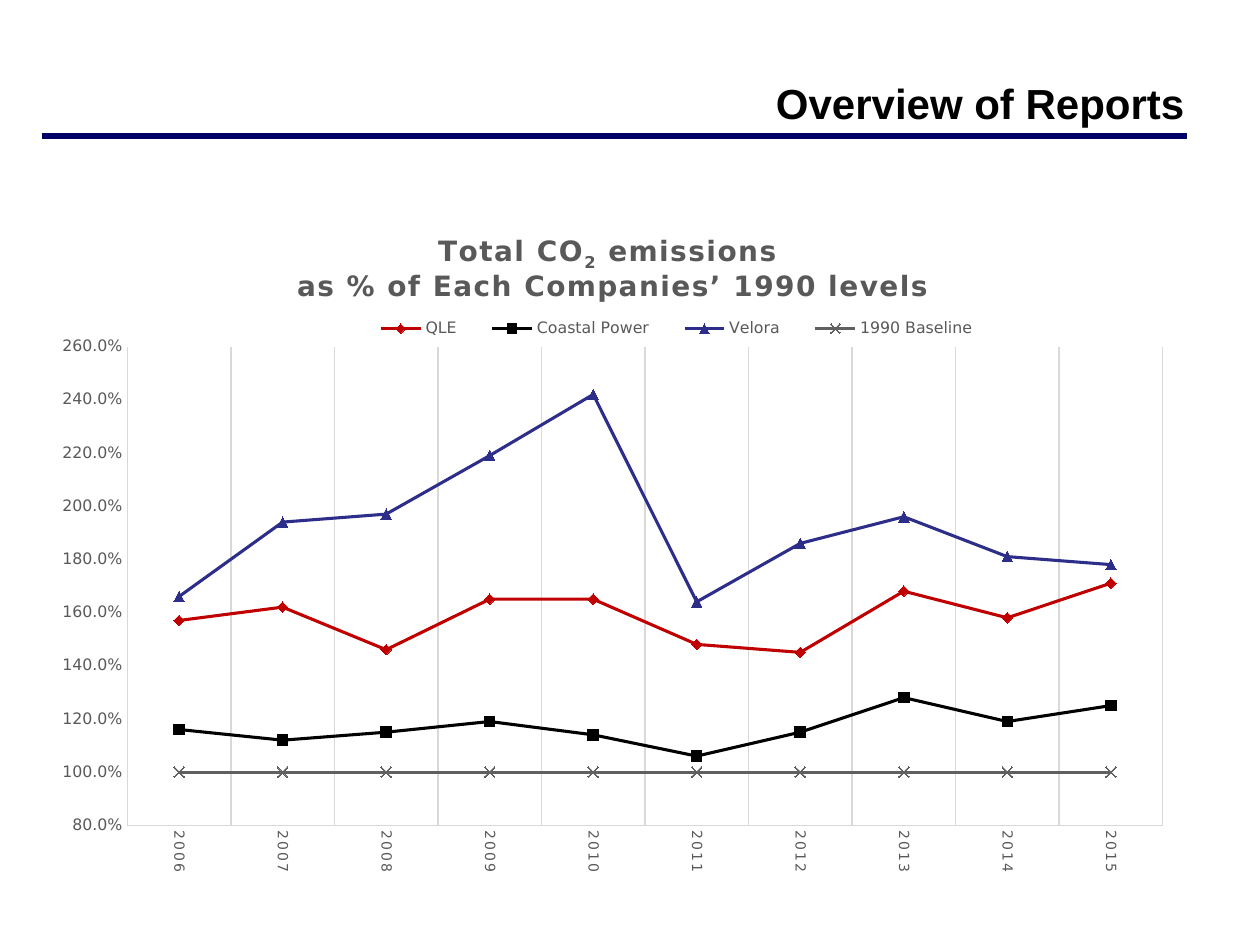
import pptx
import pptx.chart.data
import pptx.dml.color
import pptx.enum.chart
import pptx.enum.shapes
import pptx.enum.text
import pptx.oxml
import pptx.oxml.ns
import pptx.util

WIDTH, HEIGHT = 10, 7.5
COLORS = {
    "rule": "000066", "ink": "000000", "label": "595959", "grid": "D9D9D9",
    "red": "C00000", "blue": "2D2D8A", "gray": "606060",
}
CHART_FONT = "DejaVu Sans"
YEARS = [str(year) for year in range(2006, 2016)]
MARKERS = pptx.enum.chart.XL_MARKER_STYLE
EMISSIONS = [
    ("QLE", "red", MARKERS.DIAMOND,
     [1.57, 1.62, 1.46, 1.65, 1.65, 1.48, 1.45, 1.68, 1.58, 1.71]),
    ("Coastal Power", "ink", MARKERS.SQUARE,
     [1.16, 1.12, 1.15, 1.19, 1.14, 1.06, 1.15, 1.28, 1.19, 1.25]),
    ("Velora", "blue", MARKERS.TRIANGLE,
     [1.66, 1.94, 1.97, 2.19, 2.42, 1.64, 1.86, 1.96, 1.81, 1.78]),
    ("1990 Baseline", "gray", MARKERS.X, [1] * len(YEARS)),
]


def rgb(name):
    return pptx.dml.color.RGBColor.from_string(COLORS[name])


def share(*parts):
    """Turn alternating shares of slide width and height into lengths."""
    return [pptx.util.Inches(part * (HEIGHT if i % 2 else WIDTH))
            for i, part in enumerate(parts)]


def style_font(font, name, size, color, bold=False):
    font.name, font.size, font.bold = name, pptx.util.Pt(size), bold
    font.color.rgb = rgb(color)


def style_line(line, color, width):
    line.color.rgb = rgb(color)
    line.width = pptx.util.Pt(width)


def add_heading(slide, text):
    heading = slide.shapes.title
    heading.left, heading.top, heading.width, heading.height = share(
        0.267, 0.073, 0.683, 0.071)
    frame = heading.text_frame
    frame.vertical_anchor = pptx.enum.text.MSO_ANCHOR.MIDDLE
    paragraph = frame.paragraphs[0]
    paragraph.alignment = pptx.enum.text.PP_ALIGN.RIGHT
    run = paragraph.add_run()
    run.text = text
    style_font(run.font, "Arial", 24, "ink", True)


def add_rule(slide):
    rule = slide.shapes.add_connector(
        pptx.enum.shapes.MSO_CONNECTOR.STRAIGHT, *share(0.033, 0.144, 0.942, 0.144))
    style_line(rule.line, "rule", 3)
    properties = rule._element.spPr
    properties.append(properties.makeelement(pptx.oxml.ns.qn("a:effectLst"), {}))


def place(part, x, y, w=None, h=None, inner=False):
    """Fix a chart part at shares of the chart's size."""
    fields = [("layoutTarget", "inner")] if inner else []
    fields += [("xMode", "edge"), ("yMode", "edge")]
    fields += [(key, value) for key, value in zip("xywh", (x, y, w, h)) if value is not None]
    inside = "".join(f'<c:{key} val="{value}"/>' for key, value in fields)
    layout = pptx.oxml.parse_xml(
        f'<c:layout {pptx.oxml.ns.nsdecls("c")}><c:manualLayout>{inside}'
        '</c:manualLayout></c:layout>')
    for old in part.findall(pptx.oxml.ns.qn("c:layout")):
        part.remove(old)
    before = {"title": "c:tx", "legend": "c:legendPos"}
    local = part.tag.split("}")[1]
    if local in before:
        part.find(pptx.oxml.ns.qn(before[local])).addnext(layout)
    else:
        part.insert(0, layout)


def add_chart_title(chart):
    title = chart.chart_title
    frame = title.text_frame
    lines = [[("Total CO", 0), ("2", -25000), (" emissions ", 0)],
             [("as % of Each Companies’ 1990 levels", 0)]]
    for i, line in enumerate(lines):
        paragraph = frame.add_paragraph() if i else frame.paragraphs[0]
        for text, baseline in line:
            run = paragraph.add_run()
            run.text = text
            style_font(run.font, CHART_FONT, 16, "label", True)
            run.font._element.set("spc", "100")
            run.font._element.set("baseline", str(baseline))
    title.include_in_layout = False
    place(title._element, 0.22, 0.036)


def style_axes(chart):
    ticks = pptx.enum.chart.XL_TICK_MARK
    years, levels = chart.category_axis, chart.value_axis
    for axis, size in ((years, 8), (levels, 9)):
        axis.major_tick_mark = axis.minor_tick_mark = ticks.NONE
        style_line(axis.format.line, "grid", 0.75)
        style_font(axis.tick_labels.font, CHART_FONT, size, "label")
    years.has_major_gridlines = True
    style_line(years.major_gridlines.format.line, "grid", 0.75)
    year_text = years._element.find(pptx.oxml.ns.qn("c:txPr"))
    year_text.bodyPr.set("rot", "5400000")
    year_text.bodyPr.set("vert", "horz")
    years.tick_labels.font._element.set("spc", "100")
    levels.has_major_gridlines = False
    levels.minimum_scale, levels.maximum_scale, levels.major_unit = 0.8, 2.6, 0.2
    levels.tick_labels.number_format = "0.0%"
    levels.tick_labels.number_format_is_linked = False


def style_series(series, color, marker):
    series.smooth = False
    style_line(series.format.line, color, 1.75)
    series.marker.style, series.marker.size = marker, 6
    series.marker.format.line.color.rgb = rgb(color)
    series.marker.format.fill.solid()
    series.marker.format.fill.fore_color.rgb = rgb(color)


def add_emissions_chart(slide):
    data = pptx.chart.data.CategoryChartData(number_format="0.0%")
    data.categories = YEARS
    for company, _, _, levels in EMISSIONS:
        data.add_series(company, levels)
    chart = slide.shapes.add_chart(
        pptx.enum.chart.XL_CHART_TYPE.LINE_MARKERS,
        *share(0.033, 0.217, 0.908, 0.727), data).chart
    style_font(chart.font, CHART_FONT, 10, "ink")
    add_chart_title(chart)
    style_axes(chart)
    plot = chart.plots[0]
    plot.vary_by_categories = False
    for series, (_, color, marker, _) in zip(plot.series, EMISSIONS):
        style_series(series, color, marker)
    chart.has_legend = True
    chart.legend.position = pptx.enum.chart.XL_LEGEND_POSITION.TOP
    chart.legend.include_in_layout = False
    style_font(chart.legend.font, CHART_FONT, 9, "label")
    place(chart.legend._element, 0.27, 0.16, 0.57, 0.04)
    place(chart._chartSpace.chart.plotArea, 0.075, 0.206, 0.905, 0.697, inner=True)


def main():
    deck = pptx.Presentation()
    deck.slide_width, deck.slide_height = share(1, 1)
    slide = deck.slides.add_slide(deck.slide_layouts.get_by_name("Title Only"))
    add_rule(slide)
    add_heading(slide, "Overview of Reports")
    add_emissions_chart(slide)
    deck.save("out.pptx")


if __name__ == "__main__":
    main()
